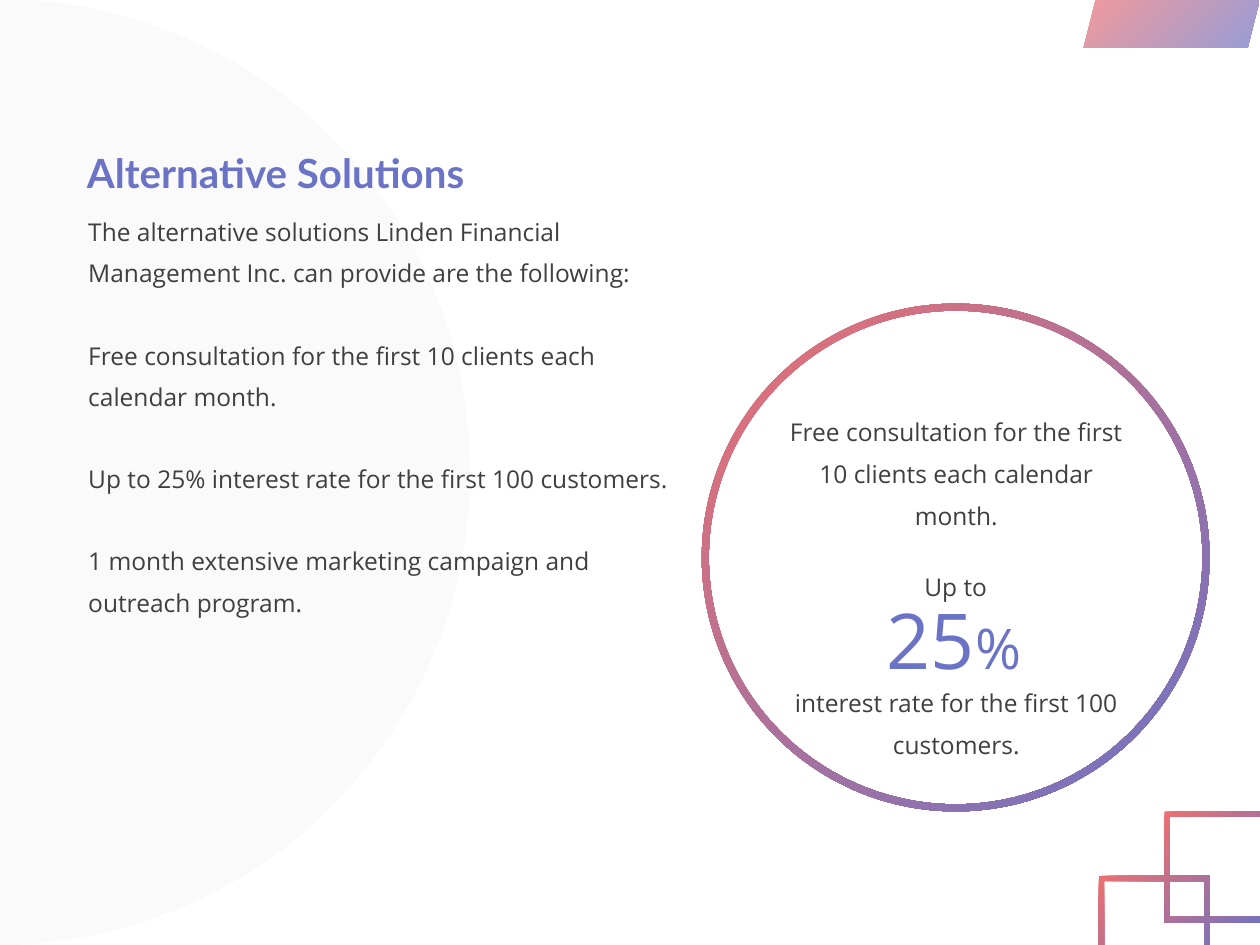
import pptx
import pptx.util
import pptx.dml.color
import pptx.enum.shapes
import pptx.enum.text
import lxml.etree
from dataclasses import dataclass

Inches, Pt = pptx.util.Inches, pptx.util.Pt
Kind = pptx.enum.shapes.MSO_SHAPE
Align = pptx.enum.text.PP_ALIGN


@dataclass(frozen=True)
class Theme:
    head: str = "Lato"
    text: str = "Open Sans"
    blue: str = "6B73C6"
    red: str = "EB7072"
    ink: str = "3F3F3F"
    pale: str = "FAFAFA"
    title: int = 23
    body: int = 14
    big: int = 44
    sign: int = 32
    gap: float = 23.5


LOOK = Theme()

# Content
TITLE = "Alternative Solutions"
BODY = [
    "The alternative solutions Linden Financial Management Inc. can provide are the following:",
    "Free consultation for the first 10 clients each calendar month.",
    "Up to 25% interest rate for the first 100 customers.",
    "1 month extensive marketing campaign and outreach program.",
]
# Ring notes: text, box, line spacing
NOTES = [
    ("Free consultation for the first 10 clients each calendar month.", (6.05, 3.16, 3.08, 0.92), 1.43),
    ("Up to", (7.21, 4.36, 0.75, 0.41), 1.57),
    ("interest rate for the first 100 customers.", (6.05, 5.31, 3.08, 0.66), 1.43),
]
RATE = [("25", LOOK.big), ("%", LOOK.sign)]
FRAMES = [(8.72, 6.95), (9.24, 6.44)]
SIDE = 0.88


def tint(hue):
    return pptx.dml.color.RGBColor.from_string(hue)


def place(shape, box):
    shape.left, shape.top, shape.width, shape.height = map(Inches, box)


def style(run, size, hue=LOOK.ink, face=LOOK.text, bold=False):
    font = run.font
    font.name, font.size, font.bold = face, Pt(size), bold
    font.color.rgb = tint(hue)


def setup(frame):
    frame.word_wrap = True
    frame.auto_size = pptx.enum.text.MSO_AUTO_SIZE.NONE
    frame.vertical_anchor = pptx.enum.text.MSO_ANCHOR.TOP


def draw(shapes, kind, box, *adjust):
    shape = shapes.add_shape(kind, *map(Inches, box))
    shape.shadow.inherit = False
    shape.line.fill.background()
    for i, value in enumerate(adjust):
        shape.adjustments[i] = value
    return shape


def blend(shape, alpha=None):
    """Diagonal red to blue fill, with optional opacity in percent."""
    shape.fill.gradient()
    shape.fill.gradient_angle = 315
    for stop, hue in zip(shape.fill.gradient_stops, (LOOK.red, LOOK.blue)):
        stop.color.rgb = tint(hue)
    if alpha:
        space = pptx.oxml.ns.qn
        for node in shape.element.spPr.iter(space("a:srgbClr")):
            lxml.etree.SubElement(node, space("a:alpha")).set("val", str(alpha * 1000))


def write(slide, box):
    frame = slide.shapes.add_textbox(*map(Inches, box)).text_frame
    setup(frame)
    return frame.paragraphs[0]


def main():
    deck = pptx.Presentation()
    deck.slide_width, deck.slide_height = Inches(10), Inches(7.5)
    slide = deck.slides.add_slide(deck.slide_layouts[1])
    shapes = slide.shapes

    # Title
    title = shapes.title
    place(title, (0.59, 1.13, 3.52, 0.49))
    setup(title.text_frame)
    title.text_frame.text = TITLE
    para = title.text_frame.paragraphs[0]
    para.alignment = Align.LEFT
    style(para.runs[0], LOOK.title, LOOK.blue, LOOK.head, True)

    # Pale half disc behind the text
    disc = draw(shapes, Kind.CHORD, (-3.78, -0.01, 7.51, 7.51), 162, 54)
    disc.fill.solid()
    disc.fill.fore_color.rgb = tint(LOOK.pale)
    title.element.addprevious(disc.element)

    # Body list without bullets
    body = slide.placeholders[1]
    place(body, (0.6, 1.58, 5, 3.16))
    setup(body.text_frame)
    body.text_frame.text = "\n".join(BODY)
    for i, para in enumerate(body.text_frame.paragraphs):
        para.line_spacing = 1.4
        para.space_before = Pt(LOOK.gap if i else 0)
        props = para._p.get_or_add_pPr()
        props.set("marL", "0")
        props.set("indent", "0")
        lxml.etree.SubElement(props, pptx.oxml.ns.qn("a:buNone"))
        style(para.runs[0], LOOK.body)

    # Corner frames and ring
    group = shapes.add_group_shape()
    for left, top in FRAMES:
        blend(draw(group.shapes, Kind.FRAME, (left, top, SIDE, SIDE), 0.048))
    blend(draw(shapes, Kind.DONUT, (5.57, 2.41, 4.03, 4.03), 0.014))

    # Notes inside the ring
    for text, box, lines in NOTES:
        para = write(slide, box)
        para.text = text
        para.alignment, para.line_spacing = Align.CENTER, lines
        style(para.runs[0], LOOK.body)
    para = write(slide, (6.94, 4.65, 1.29, 0.84))
    for text, size in RATE:
        run = para.add_run()
        run.text = text
        style(run, size, LOOK.blue)

    # Top tab
    blend(draw(shapes, Kind.PARALLELOGRAM, (8.6, -0.01, 1.4, 0.39), 0.25), 70)

    deck.save("out.pptx")


if __name__ == "__main__":
    main()
